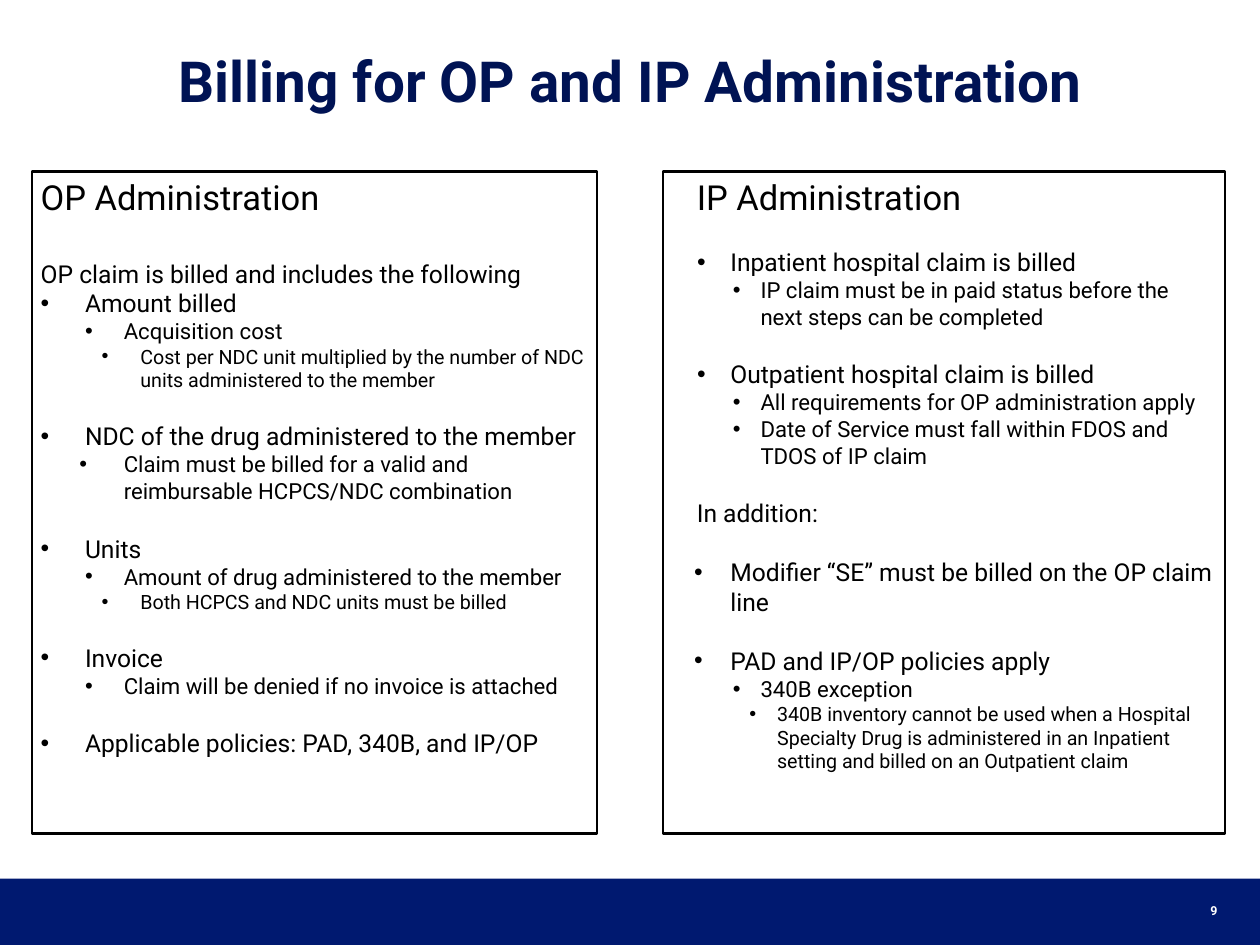
from lxml.etree import SubElement
from pptx import Presentation
from pptx.dml.color import RGBColor
from pptx.enum.shapes import MSO_SHAPE as SHAPE
from pptx.enum.text import MSO_ANCHOR as ANCHOR, PP_ALIGN as ALIGN
from pptx.oxml.ns import qn
from pptx.util import Pt


def color(hex_code):
    return RGBColor.from_string(hex_code)


def style(paragraph, size, hex_code, bold=False):
    for run in paragraph.runs:
        run.font.name = "Roboto"
        run.font.size = Pt(size)
        run.font.bold = bold
        run.font.color.rgb = color(hex_code)


deck = Presentation()
deck.slide_width, deck.slide_height = Pt(1024), Pt(768)
slide = deck.slides.add_slide(deck.slide_layouts[6])

footer = slide.shapes.add_shape(SHAPE.RECTANGLE, Pt(0), Pt(714), Pt(1024), Pt(54))
footer.shadow.inherit = False
footer.fill.solid()
footer.fill.fore_color.rgb = color("001970")
footer.line.fill.background()

captions = [
    ("Billing for OP and IP Administration", 26, 19.5, 972, 91.5, 46, "001354", ALIGN.CENTER, 0),
    ("9", 827.5, 719.5, 169, 41, 10.1, "FFFFFF", ALIGN.RIGHT, 7.2),
]
for words, left, top, width, height, size, hex_code, align, inset in captions:
    caption = slide.shapes.add_textbox(Pt(left), Pt(top), Pt(width), Pt(height)).text_frame
    caption.word_wrap = True
    caption.vertical_anchor = ANCHOR.MIDDLE
    caption.margin_left = caption.margin_right = Pt(inset)
    caption.margin_top = caption.margin_bottom = Pt(inset / 2)
    caption.text = words
    caption.paragraphs[0].alignment = align
    style(caption.paragraphs[0], size, hex_code, True)

# 
op_levels = {
    "heading": (28, 0, 0, 0),
    "lead": (20, 0, 0, 0),
    "item": (20, 36, -36, 0),
    "detail": (18, 67.5, -31.5, 1),
    "wide detail": (18, 67.5, -36, 0),
    "note": (16, 81, -31.5, 2),
}
ip_levels = {
    "heading": (28, 20.25, 0, 0),
    "lead": (20, 20.25, 0, 0),
    "item": (20, 47.5, -27, 0),
    "wide item": (20, 47.5, -29.5, 0),
    "detail": (18, 72, -22.5, 1),
    "note": (16, 85.5, -22.5, 2),
}
op_lines = [
    ("heading", 0, "OP Administration"),
    ("lead", 33.6, "OP claim is billed and includes the following"),
    ("item", 0, "Amount billed"),
    ("detail", 0, "Acquisition cost"),
    ("note", 0, "Cost per NDC unit multiplied by the number of NDC units administered to the member"),
    ("item", 24, "NDC of the drug administered to the member"),
    ("wide detail", 0, "Claim must be billed for a valid and reimbursable HCPCS/NDC combination"),
    ("item", 24, "Units"),
    ("detail", 0, "Amount of drug administered to the member"),
    ("note", 0, "Both HCPCS and NDC units must be billed"),
    ("item", 24, "Invoice"),
    ("detail", 0, "Claim will be denied if no invoice is attached"),
    ("item", 24, "Applicable policies: PAD, 340B, and IP/OP"),
]
ip_lines = [
    ("heading", 0, "IP Administration"),
    ("item", 24, "Inpatient hospital claim is billed"),
    ("detail", 0, "IP claim must be in paid status before the next steps can be completed"),
    ("item", 24, "Outpatient hospital claim is billed"),
    ("detail", 0, "All requirements for OP administration apply"),
    ("detail", 0, "Date of Service must fall within FDOS and TDOS of IP claim"),
    ("lead", 24, "In addition:"),
    ("wide item", 24, "Modifier “SE” must be billed on the OP claim line"),
    ("wide item", 24, "PAD and IP/OP policies apply"),
    ("detail", 0, "340B exception"),
    ("note", 0, "340B inventory cannot be used when a Hospital Specialty Drug is administered "
                "in an Inpatient setting and billed on an Outpatient claim"),
]

for left, width, levels, lines in [(26, 459, op_levels, op_lines), (539, 456.5, ip_levels, ip_lines)]:
    panel = slide.shapes.add_shape(SHAPE.RECTANGLE, Pt(left), Pt(139.5), Pt(width), Pt(538))
    panel.shadow.inherit = False
    panel.fill.solid()
    panel.fill.fore_color.rgb = color("FFFFFF")
    panel.line.color.rgb = color("000000")
    panel.line.width = Pt(2)
    body = panel.text_frame
    body.word_wrap = True
    body.vertical_anchor = ANCHOR.TOP
    body.text = "\n".join(words for _, _, words in lines)
    for paragraph, (role, gap, _) in zip(body.paragraphs, lines):
        size, margin, indent, level = levels[role]
        paragraph.alignment = ALIGN.LEFT
        paragraph.level = level
        if gap:
            paragraph.space_before = Pt(gap)
        properties = paragraph._p.get_or_add_pPr()
        properties.set("marL", str(Pt(margin)))
        properties.set("indent", str(Pt(indent)))
        if indent:
            SubElement(properties, qn("a:buFont"), typeface="Arial")
            SubElement(properties, qn("a:buChar"), char="•")
        style(paragraph, size, "000000")

deck.save("out.pptx")
